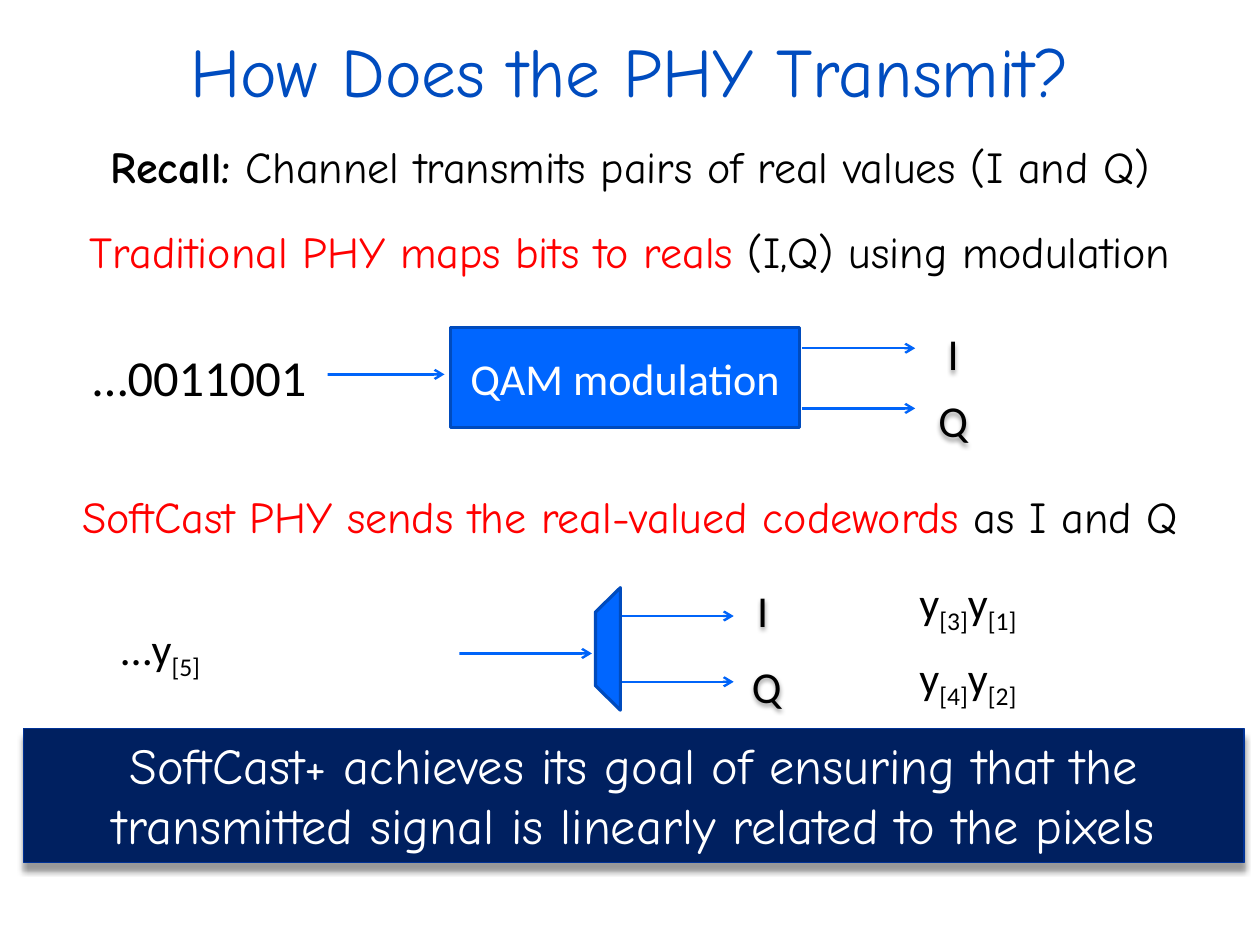
from collections import namedtuple
from dataclasses import dataclass

from lxml.etree import SubElement
from pptx import Presentation
from pptx.dml.color import RGBColor
from pptx.enum.shapes import MSO_CONNECTOR, MSO_SHAPE
from pptx.enum.text import MSO_ANCHOR, MSO_AUTO_SIZE, PP_ALIGN
from pptx.oxml.ns import qn
from pptx.util import Pt

PX = 9144  # EMU per px, 100 px to the inch
Box = namedtuple("Box", "x y w h")
Part = namedtuple("Part", "text color bold baseline", defaults=(None, False, 0))


@dataclass(frozen=True)
class Theme:
    heading_font: str = "Comic Neue"
    label_font: str = "Calibri"
    title_size: int = 44
    large_size: int = 32
    text_size: int = 28
    title: str = "004CBF"
    ink: str = "000000"
    paper: str = "FFFFFF"
    accent: str = "FF0000"
    arrow: str = "0064F9"
    block: str = "0066FF"
    block_edge: str = "004BBD"
    banner: str = "002060"
    banner_edge: str = "003296"


THEME = Theme()


def rgb(color):
    return RGBColor.from_string(color)


def emu(box):
    return [length * PX for length in box]


def write(holder, parts, size=THEME.text_size, font=THEME.label_font,
          color=THEME.ink, align=PP_ALIGN.CENTER, anchor=MSO_ANCHOR.TOP,
          margins=(10, 5)):
    frame = holder.text_frame
    frame.word_wrap = True
    frame.auto_size = MSO_AUTO_SIZE.NONE
    frame.vertical_anchor = anchor
    frame.margin_left = frame.margin_right = margins[0] * PX
    frame.margin_top = frame.margin_bottom = margins[1] * PX
    paragraph = frame.paragraphs[0]
    paragraph.alignment = align
    for part in parts:
        run = paragraph.add_run()
        run.text = part.text
        run.font.name = font
        run.font.size = Pt(size)
        run.font.bold = part.bold
        run.font.color.rgb = rgb(part.color or color)
        if part.baseline:
            run.font._element.set("baseline", str(part.baseline * 1000))
    return paragraph


def add_shadow(shape, blur, distance, angle, opacity):
    effects = SubElement(shape._element.spPr, qn("a:effectLst"))
    shadow = SubElement(effects, qn("a:outerShdw"), blurRad=str(Pt(blur)),
                        dist=str(Pt(distance)), dir=str(angle * 60000),
                        algn="ctr", rotWithShape="0")
    tint = SubElement(shadow, qn("a:srgbClr"), val=THEME.ink)
    SubElement(tint, qn("a:alpha"), val=str(opacity * 1000))


def add_block(shapes, kind, box, fill, edge=None, edge_width=2):
    block = shapes.add_shape(kind, *emu(box))
    block.fill.solid()
    block.fill.fore_color.rgb = rgb(fill)
    if edge:
        block.line.color.rgb = rgb(edge)
        block.line.width = Pt(edge_width)
    else:
        block.line.fill.background()
    return block


def add_arrow(shapes, x, y, length):
    arrow = shapes.add_connector(MSO_CONNECTOR.STRAIGHT,
                                 *emu((x, y, x + length, y)))
    arrow.line.color.rgb = rgb(THEME.arrow)
    arrow.line.width = Pt(1.5)
    SubElement(arrow.line._get_or_add_ln(), qn("a:tailEnd"), type="arrow")
    SubElement(arrow._element.spPr, qn("a:effectLst"))


def add_output(shapes, name, box):
    output = shapes.add_textbox(*emu(box))
    write(output, [Part(name)])
    add_shadow(output, 3, 2, 90, 40)


def add_signal(shapes, box, parts, **style):
    signal = add_block(shapes, MSO_SHAPE.RECTANGLE, box, THEME.paper)
    signal.shadow.inherit = False
    write(signal, parts, **style)


def codeword(*indices):
    return [part for index in indices
            for part in (Part("y"), Part(f"[{index}]", baseline=-25))]


def place_heading(holder, box, parts, **style):
    holder.left, holder.top, holder.width, holder.height = emu(box)
    paragraph = write(holder, parts, font=THEME.heading_font,
                      margins=(11, 6), **style)
    properties = paragraph._p.get_or_add_pPr()
    properties.set("marL", "0")
    properties.set("indent", "0")
    SubElement(properties, qn("a:buNone"))


# Title, recalled fact and the two statements
def headings(slide, box):
    title, traditional, softcast = slide.placeholders
    place_heading(title, Box(box.x + 56, box.y - 8, box.w - 111, 139),
                  [Part("How Does the PHY Transmit?")],
                  size=THEME.title_size, color=THEME.title,
                  anchor=MSO_ANCHOR.MIDDLE)
    place_heading(traditional, Box(box.x, box.y + 192, box.w, 67),
                  [Part("Traditional PHY maps bits to reals", THEME.accent),
                   Part(" (I,Q) using modulation")])
    place_heading(softcast, Box(box.x, box.y + 425, box.w, 58),
                  [Part("SoftCast PHY sends the real-valued codewords ",
                        THEME.accent), Part("as I and Q")])
    recall_box = Box(box.x, box.y + 117, box.w, 67)
    recall = slide.shapes.add_textbox(*emu(recall_box))
    place_heading(recall, recall_box,
                  [Part("Recall:", bold=True),
                   Part(" Channel transmits pairs of real values (I and Q)")])


# Bits through a modulator to I and Q
def modulation_diagram(slide, box):
    shapes = slide.shapes.add_group_shape().shapes
    add_arrow(shapes, box.x + 209, box.y + 47, 111)
    modulator = add_block(shapes, MSO_SHAPE.RECTANGLE,
                          Box(box.x + 325, box.y + 6, 308, 88),
                          THEME.block, THEME.block_edge)
    modulator.shadow.inherit = False
    write(modulator, [Part("QAM modulation")], color=THEME.paper,
          anchor=MSO_ANCHOR.MIDDLE)
    for arrow_y in (24, 77):
        add_arrow(shapes, box.x + 635, box.y + arrow_y, 100)
    for name, label_y in (("I", 0), ("Q", 59)):
        add_output(shapes, name, Box(box.x + 743, box.y + label_y, 51, 57))
    add_signal(slide.shapes, Box(box.x, box.y + 17, 217, 64),
               [Part("…0011001")], size=THEME.large_size, align=PP_ALIGN.LEFT)


# Codewords split directly into I and Q
def codeword_diagram(slide, box):
    shapes = slide.shapes.add_group_shape().shapes
    add_arrow(shapes, box.x + 292, box.y + 74, 133)
    for arrow_y in (41, 99):
        add_arrow(shapes, box.x + 450, box.y + arrow_y, 100)
    for name, label_y, width in (("I", 7, 51), ("Q", 74, 58)):
        add_output(shapes, name, Box(box.x + 550, box.y + label_y, width, 57))
    splitter = add_block(shapes, MSO_SHAPE.FLOWCHART_MANUAL_OPERATION,
                         Box(box.x + 385, box.y + 59, 108, 22),
                         THEME.block, THEME.block_edge)
    splitter.rotation = 90
    splitter.shadow.inherit = False
    add_signal(slide.shapes, Box(box.x, box.y + 41, 308, 57),
               [Part("…"), *codeword(5)], align=PP_ALIGN.LEFT)
    for signal_y, indices in ((0, (3, 1)), (66, (4, 2))):
        add_signal(slide.shapes, Box(box.x + 617, box.y + signal_y, 192, 57),
                   codeword(*indices), align=PP_ALIGN.RIGHT)


# Conclusion banner
def conclusion(slide, box):
    banner = add_block(slide.shapes, MSO_SHAPE.RECTANGLE, box,
                       THEME.banner, THEME.banner_edge, 0.75)
    add_shadow(banner, 4, 5, 90, 40)
    write(banner, [Part("SoftCast+ achieves its goal of ensuring that the "
                        "transmitted signal is linearly related to the pixels")],
          size=THEME.large_size, font=THEME.heading_font, color=THEME.paper)


def main():
    deck = Presentation()
    page = Box(0, 0, 1111, 833)
    deck.slide_width, deck.slide_height = page.w * PX, page.h * PX
    two_content = deck.slide_layouts[3]
    slide = deck.slides.add_slide(two_content)
    for holder in list(slide.placeholders)[3:]:
        holder._element.getparent().remove(holder._element)
    headings(slide, page)
    modulation_diagram(slide, Box(72, 283, 794, 116))
    codeword_diagram(slide, Box(97, 502, 809, 131))
    conclusion(slide, Box(21, 642, 1076, 118))
    deck.save("out.pptx")


if __name__ == "__main__":
    main()
